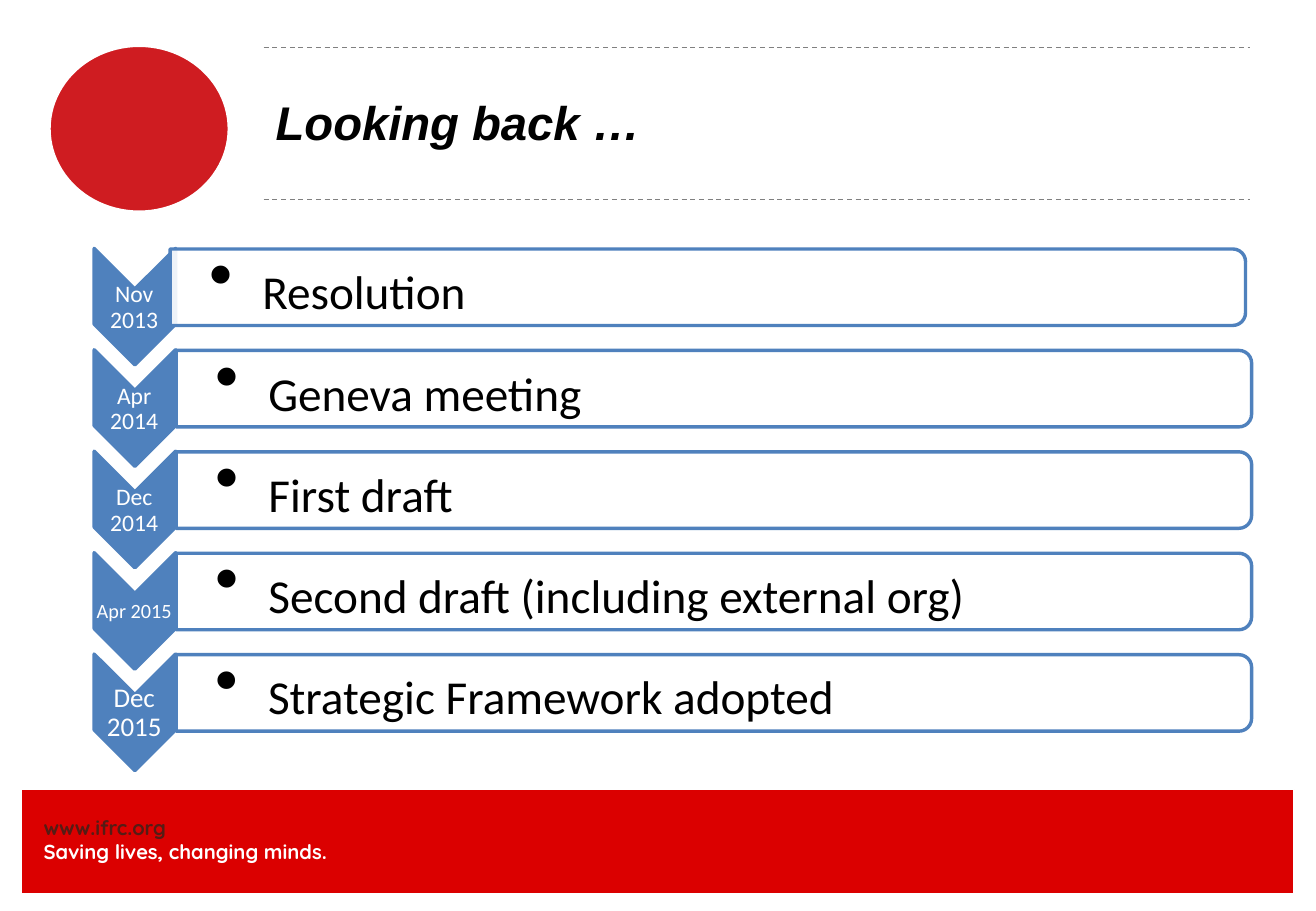
from lxml.etree import SubElement
from pptx import Presentation
from pptx.dml.color import RGBColor
from pptx.enum.dml import MSO_LINE
from pptx.enum.shapes import MSO_CONNECTOR, MSO_SHAPE
from pptx.enum.text import MSO_ANCHOR as ANCHOR, PP_ALIGN as ALIGN
from pptx.oxml.ns import qn
from pptx.util import Inches, Pt

COLORS = {"band": "DB0000", "disc": "CF1C21", "blue": "4F81BD", "rule": "808080",
          "link": "551C15", "white": "FFFFFF", "black": "000000"}


class Deck:
    def __init__(self, width, height):
        self.prs = Presentation()
        self.prs.slide_width = Inches(width)
        self.prs.slide_height = Inches(height)
        self.s = self.prs.slides.add_slide(self.prs.slide_layouts[6])

    def color(self, name):
        return RGBColor.from_string(COLORS[name])

    def shape(self, kind, x, y, w, h, fill, line, weight, rotation=0, opacity=None):
        sp = self.s.shapes.add_shape(kind, Inches(x), Inches(y), Inches(w), Inches(h))
        sp.shadow.inherit = False
        sp.rotation = rotation
        sp.fill.solid()
        sp.fill.fore_color.rgb = self.color(fill)
        if opacity is not None:
            clr = sp._element.spPr.find(qn("a:solidFill")).find(qn("a:srgbClr"))
            SubElement(clr, qn("a:alpha"), val=str(opacity * 1000))
        sp.line.color.rgb = self.color(line)
        sp.line.width = Pt(weight)
        return sp

    def rule(self, x1, x2, y):
        c = self.s.shapes.add_connector(MSO_CONNECTOR.STRAIGHT, Inches(x1), Inches(y),
                                        Inches(x2), Inches(y))
        SubElement(c._element.spPr, qn("a:effectLst"))
        c.line.color.rgb = self.color("rule")
        c.line.width = Pt(0.75)
        c.line.dash_style = MSO_LINE.DASH

    def box(self, x, y, w, h, insets=(0.1, 0.05, 0.1, 0.05), anchor=ANCHOR.MIDDLE):
        tf = self.s.shapes.add_textbox(Inches(x), Inches(y), Inches(w), Inches(h)).text_frame
        tf.word_wrap = True
        tf.vertical_anchor = anchor
        tf.margin_left, tf.margin_top, tf.margin_right, tf.margin_bottom = map(Inches, insets)
        return tf

    def run(self, p, text, size, font, color="black", bold=False, italic=False):
        r = p.add_run()
        r.text = text
        r.font.size = Pt(size)
        r.font.name = font
        r.font.bold = bold
        r.font.italic = italic
        r.font.color.rgb = self.color(color)

    def bullet(self, p, indent):
        pPr = p._p.get_or_add_pPr()
        pPr.set("marL", str(Inches(indent)))
        pPr.set("indent", str(-Inches(indent)))
        SubElement(pPr, qn("a:buChar"), char="•")

    def milestone(self, y, date, date_size, text, bar_x, lead_size):
        # Date chevron
        self.shape(MSO_SHAPE.CHEVRON, 0.63, y, 0.96, 0.67, "blue", "blue", 2, rotation=90)
        p = self.box(0.77, y + 0.2, 0.67, 0.29, (0.01,) * 4).paragraphs[0]
        p.alignment = ALIGN.CENTER
        p.line_spacing = 0.9
        self.run(p, date, date_size, "Calibri", "white")
        # Bar, turned a quarter so that its round corners face right
        self.shape(MSO_SHAPE.ROUND_2_SAME_RECTANGLE, bar_x + 4.11, y - 4.25, 0.63, 8.85,
                   "white", "blue", 2, rotation=90, opacity=90)
        p = self.box(bar_x, y - 0.11, 8.82, 0.57, (0.32, 0.03, 0.03, 0.03)).paragraphs[0]
        p.line_spacing = 0.9
        self.bullet(p, 0.31)
        self.run(p, " ", lead_size, "Calibri")
        self.run(p, text, 28, "Calibri")


def main():
    deck = Deck(10.83, 7.5)

    # Footer band
    deck.shape(MSO_SHAPE.RECTANGLE, 0.18, 6.5, 10.47, 0.86, "band", "white", 0.75)
    tf = deck.box(0.36, 6.71, 3.7, 0.4, (0,) * 4, ANCHOR.TOP)
    deck.run(tf.paragraphs[0], "www.ifrc.org", 12, "Quicksand", "link", bold=True)
    deck.run(tf.add_paragraph(), "Saving lives, changing minds.", 12, "Quicksand", "white",
             bold=True)

    # Header
    deck.shape(MSO_SHAPE.OVAL, 0.4, 0.37, 1.49, 1.38, "disc", "white", 2.5)
    for y in (0.39, 1.64):
        deck.rule(2.17, 10.29, y)
    tf = deck.box(2.17, 0.38, 8.12, 1.25)
    deck.run(tf.paragraphs[0], "Looking back …", 28, "Arial", bold=True, italic=True)

    # Timeline
    milestones = [
        ("Nov 2013", 14, "Resolution", 1.4, 41),
        ("Apr 2014", 14, "Geneva meeting", 1.45, 41),
        ("Dec 2014", 14, "First draft", 1.45, 41),
        ("Apr 2015", 12, "Second draft (including external org)", 1.45, 41),
        ("Dec 2015", 16, "Strategic Framework adopted", 1.45, 40),
    ]
    top, bottom = 2.19, 5.53
    pitch = (bottom - top) / (len(milestones) - 1)
    for i, row in enumerate(milestones):
        deck.milestone(top + i * pitch, *row)

    deck.prs.save("out.pptx")


if __name__ == "__main__":
    main()
